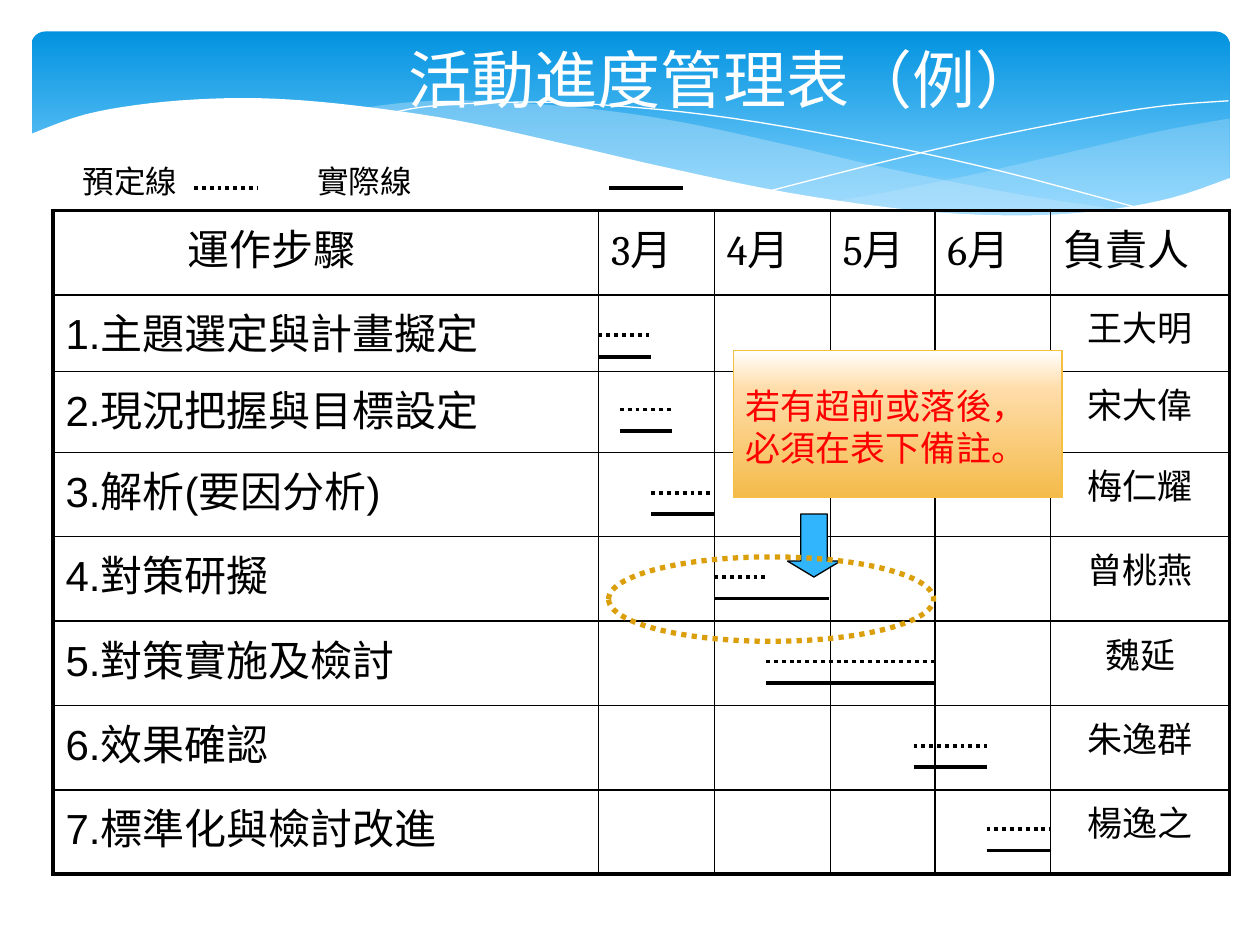
import pptx
import pptx.dml.color
import pptx.enum.dml
import pptx.enum.shapes
import pptx.enum.text
import pptx.oxml
import pptx.oxml.ns
import pptx.util
from pptx.util import Inches

SHAPE = pptx.enum.shapes.MSO_SHAPE
CENTER = pptx.enum.text.PP_ALIGN.CENTER
NAMESPACE = pptx.oxml.ns.nsdecls("a")
COLUMNS = [4.33, 0.92, 0.92, 0.83, 0.92, 1.42]
ROWS = [0.67, 0.61, 0.64] + [0.67] * 5
HEADINGS = ["運作步驟", "3月", "4月", "5月", "6月", "負責人"]
# Each task: step, owner, line height, start, planned end, actual end
TASKS = [
    ("1.主題選定與計畫擬定", "王大明", 2.66, 4.75, 5.17, 5.17),
    ("2.現況把握與目標設定", "宋大偉", 3.25, 4.92, 5.33, 5.33),
    ("3.解析(要因分析)", "梅仁耀", 3.91, 5.17, 5.67, 5.67),
    ("4.對策研擬", "曾桃燕", 4.58, 5.67, 6.08, 6.58),
    ("5.對策實施及檢討", "魏延", 5.25, 6.08, 7.42, 7.42),
    ("6.效果確認", "朱逸群", 5.92, 7.25, 7.83, 7.83),
    ("7.標準化與檢討改進", "楊逸之", 6.58, 7.83, 8.33, 8.33),
]
RIGHT_TOP = [(9.76, 0.94), (9.21, 1.04), (8.61, 1.18), (7.79, 1.37), (7.06, 1.52), (6.61, 1.6)]
RIGHT_BOTTOM = [(6.61, 1.6), (7.32, 1.68), (7.92, 1.72), (8.54, 1.7), (9.13, 1.62), (9.49, 1.52), (9.76, 1.41)]
MIDDLE_TOP = [(8.93, 1.67), (8.07, 1.54), (7.06, 1.34), (6.29, 1.16), (5.41, 0.97), (4.65, 0.86),
              (3.8, 0.8), (3.28, 0.81), (2.86, 0.86)]
MIDDLE_BOTTOM = [(2.86, 0.86), (3.62, 0.97), (4.49, 1.16), (5.66, 1.43), (6.5, 1.58), (7.22, 1.68),
                 (8.07, 1.73), (8.57, 1.71), (8.93, 1.67)]
FALLING_LINE = [(3.09, 0.9), (3.44, 0.84), (4.16, 0.81), (4.89, 0.84), (5.82, 0.94), (6.95, 1.14),
                (7.95, 1.36), (9.07, 1.66)]
RISING_LINE = [(6.13, 1.51), (6.95, 1.3), (7.76, 1.11), (8.66, 0.93), (9.24, 0.84), (9.75, 0.8)]
WHITE_TOP = [(9.77, 1.41), (9.3, 1.57), (8.75, 1.67), (8.09, 1.71), (7.26, 1.67), (6.26, 1.53),
             (5.29, 1.33), (4.47, 1.14), (3.65, 0.96), (2.92, 0.85), (2.3, 0.79), (1.77, 0.78),
             (1.19, 0.82), (0.67, 0.91), (0.23, 1.07)]


def color(value):
    """Return the colour of a hex string."""
    return pptx.dml.color.RGBColor.from_string(value)


def paint(shape, fill=None, line=None, width=0.75, alpha=None, dotted=False):
    """Set fill and outline of a shape, leaving out what is None."""
    shape.shadow.inherit = False
    if fill is None:
        shape.fill.background()
    elif isinstance(fill, list):
        shape.fill.gradient()
        shape.fill.gradient_angle = 270
        stops = shape._element.spPr.find(".//" + pptx.oxml.ns.qn("a:gsLst"))
        for stop in list(stops):
            stops.remove(stop)
        for position, value in fill:
            stops.append(pptx.oxml.parse_xml(
                f'<a:gs {NAMESPACE} pos="{position * 1000}"><a:srgbClr val="{value}"/></a:gs>'))
    else:
        shape.fill.solid()
        shape.fill.fore_color.rgb = color(fill)
        if alpha is not None:
            shape._element.spPr.find(".//" + pptx.oxml.ns.qn("a:srgbClr")).append(
                pptx.oxml.parse_xml(f'<a:alpha {NAMESPACE} val="{alpha * 1000}"/>'))
    if line is None:
        shape.line.fill.background()
    else:
        style_line(shape.line, line, width, dotted)


def style_line(line, value, width, dotted):
    """Set colour, width and dash of a line."""
    line.color.rgb = color(value)
    line.width = pptx.util.Pt(width)
    if dotted:
        line.dash_style = pptx.enum.dml.MSO_LINE.ROUND_DOT


def add_preset(slide, kind, box, adjustments=(), **look):
    """Add a preset shape."""
    shape = slide.shapes.add_shape(kind, *map(Inches, box))
    for index, value in enumerate(adjustments):
        shape.adjustments[index] = value
    paint(shape, **look)


def smooth(points, steps=5):
    """Return points on a Catmull-Rom curve through the given points."""
    padded = [points[0], *points, points[-1]]
    curve = []
    for a, b, c, d in zip(padded, padded[1:], padded[2:], padded[3:]):
        for t in (step / steps for step in range(steps)):
            curve.append(tuple(
                0.5 * (2 * q + (r - p) * t + (2 * p - 5 * q + 4 * r - s) * t ** 2
                       + (3 * q - p - 3 * r + s) * t ** 3)
                for p, q, r, s in zip(a, b, c, d)))
    return curve + [points[-1]]


def add_wave(slide, points, close=True, **look):
    """Add a freeform through the points."""
    first, *others = [(Inches(x), Inches(y)) for x, y in points]
    builder = slide.shapes.build_freeform(*first, scale=1.0)
    builder.add_line_segments(others, close=close)
    paint(builder.convert_to_shape(), **look)


def add_rule(slide, start, end, y, dotted=False):
    """Add a horizontal progress line."""
    rule = slide.shapes.add_connector(
        pptx.enum.shapes.MSO_CONNECTOR.STRAIGHT, Inches(start), Inches(y), Inches(end), Inches(y))
    style_line(rule.line, "000000", 2.25, dotted)
    rule._element.spPr.append(pptx.oxml.parse_xml(f"<a:effectLst {NAMESPACE}/>"))


def write(frame, text, size, font="Arial", value="000000", **layout):
    """Write one formatted paragraph into a text frame."""
    frame.word_wrap = True
    paragraph = frame.paragraphs[0]
    for name, setting in layout.items():
        setattr(paragraph, name, setting)
    run = paragraph.add_run()
    run.text = text
    formats = {"size": pptx.util.Pt(size), "name": font}
    for name, setting in formats.items():
        setattr(run.font, name, setting)
    run.font.color.rgb = color(value)
    return paragraph


def add_text(slide, box, text, size, **look):
    """Add a text box and return its frame."""
    frame = slide.shapes.add_textbox(*map(Inches, box)).text_frame
    write(frame, text, size, **look)
    return frame


def set_borders(cell, widths):
    """Draw the left, right, top and bottom border of a cell."""
    cell.fill.background()
    for index, (side, width) in enumerate(zip("LRTB", widths)):
        cell._tc.get_or_add_tcPr().insert(index, pptx.oxml.parse_xml(
            f'<a:ln{side} {NAMESPACE} w="{int(width * 12700)}"><a:solidFill>'
            f'<a:srgbClr val="000000"/></a:solidFill></a:ln{side}>'))


def add_schedule(slide):
    """Add the table of steps, months and owners."""
    table = slide.shapes.add_table(len(ROWS), len(COLUMNS), *map(Inches, (0.42, 1.67, 9.33, 5.3))).table
    table.first_row = table.horz_banding = False
    for column, width in zip(table.columns, COLUMNS):
        column.width = Inches(width)
    for row, height in zip(table.rows, ROWS):
        row.height = Inches(height)
    last_row, last_column = len(ROWS) - 1, len(COLUMNS) - 1
    for r in range(len(ROWS)):
        for c in range(len(COLUMNS)):
            edges = (c == 0, c == last_column, r == 0, r == last_row)
            set_borders(table.cell(r, c), [2.25 if edge else 1 for edge in edges])
    space = pptx.util.Pt(5)
    for c, heading in enumerate(HEADINGS):
        font = "Cambria" if 0 < c < last_column else "Arial"
        write(table.cell(0, c).text_frame, heading, 24, font, space_before=space)
    table.cell(0, 0).margin_left = Inches(1.07)
    for r, (step, owner, *_) in enumerate(TASKS, 1):
        write(table.cell(r, 0).text_frame, step, 24, space_before=space)
        write(table.cell(r, last_column).text_frame, owner, 20, space_before=pptx.util.Pt(4), alignment=CENTER)


def add_legend(slide):
    """Add the key to planned and actual lines."""
    frame = add_text(slide, (0.56, 1.24, 4.75, 0.4), "預定線\t實際線", 18)
    frame.paragraphs[0]._p.get_or_add_pPr().append(pptx.oxml.parse_xml(
        f'<a:tabLst {NAMESPACE}><a:tab pos="{Inches(1.86)}" algn="l"/></a:tabLst>'))
    add_rule(slide, 1.54, 2.04, 1.49, dotted=True)
    add_rule(slide, 4.83, 5.42, 1.49)


def main():
    """Build the activity schedule slide."""
    presentation = pptx.Presentation()
    presentation.slide_width, presentation.slide_height = Inches(10), Inches(7.5)
    slide = presentation.slides.add_slide(presentation.slide_layouts[6])
    add_preset(slide, SHAPE.ROUNDED_RECTANGLE, (0.25, 0.25, 9.51, 1.56), [0.07],
               fill=[(0, "0293E0"), (90, "83D3FE")])
    add_wave(slide, smooth(RIGHT_TOP) + smooth(RIGHT_BOTTOM), fill="C6E7FC", alpha=29)
    add_wave(slide, smooth(MIDDLE_TOP) + smooth(MIDDLE_BOTTOM), fill="C6E7FC", alpha=40)
    for points in (FALLING_LINE, RISING_LINE):
        add_wave(slide, smooth(points), close=False, line="FFFFFF", width=0)
    add_wave(slide, smooth(WHITE_TOP) + [(0.23, 2.24), (9.77, 2.24)], fill="FFFFFF")
    add_schedule(slide)
    add_legend(slide)
    for _, _, y, start, planned, actual in TASKS:
        add_rule(slide, start, planned, y, dotted=True)
        add_rule(slide, start, actual, y + 0.17)
    title = add_text(slide, (1.48, 0, 8.52, 1.25), "活動進度管理表（例）", 36,
                     font="Cabin", value="FFFFFF", alignment=CENTER)
    title.vertical_anchor = pptx.enum.text.MSO_ANCHOR.MIDDLE
    add_preset(slide, SHAPE.RECTANGLE, (5.82, 2.78, 2.61, 1.17), line="F5C040",
               fill=[(0, "FFFFFF"), (26, "FFDDAA"), (100, "F4BB4A")])
    add_text(slide, (5.82, 3, 2.51, 0.77), "若有超前或落後，必須在表下備註。", 20,
             font="Noto Sans CJK SC", value="FF0000")
    add_preset(slide, SHAPE.DOWN_ARROW, (6.25, 4.08, 0.42, 0.5), [0.5, 0.3], fill="31B6FD", line="000000")
    add_preset(slide, SHAPE.OVAL, (4.83, 4.42, 2.58, 0.67), line="DC9F0C", width=3, dotted=True)


    presentation.save("out.pptx")


if __name__ == "__main__":
    main()
